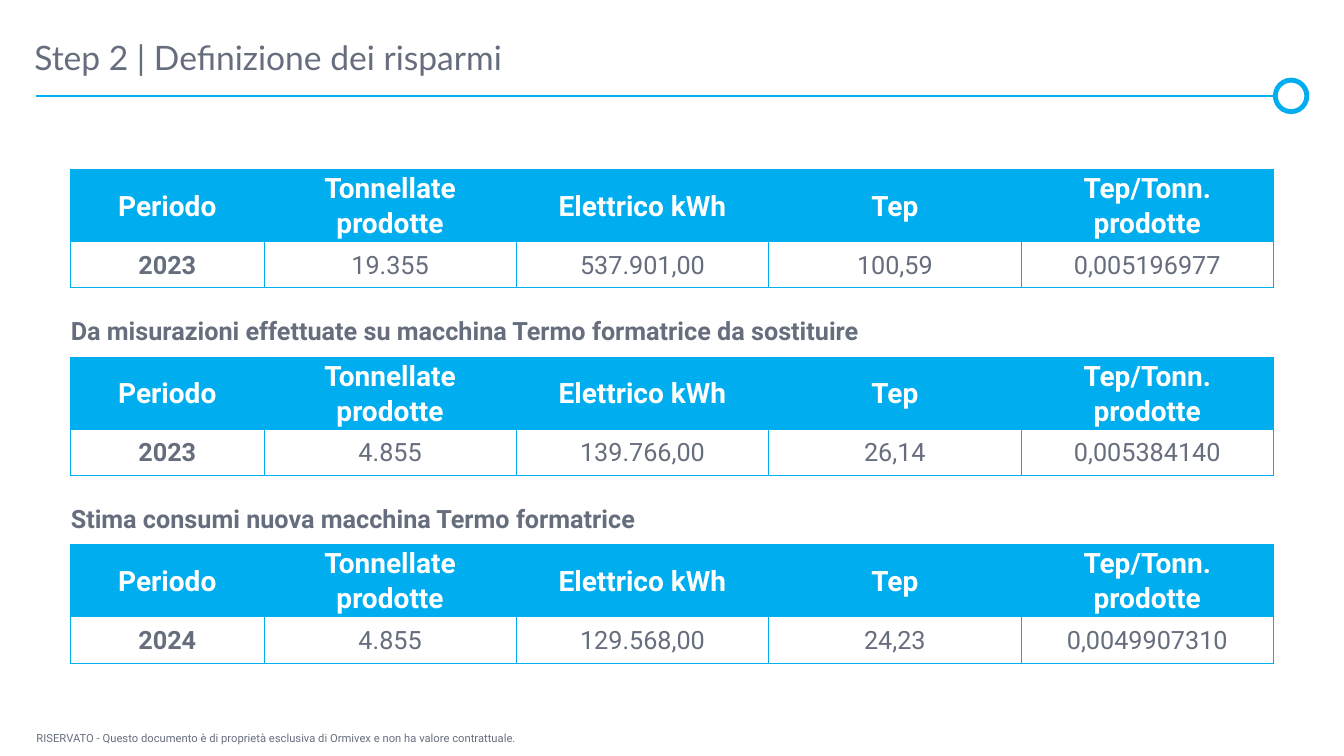
"""Build the slide that defines energy savings in three tables."""
import pptx
import pptx.dml.color
import pptx.enum.shapes
import pptx.enum.text
import pptx.oxml
import pptx.oxml.ns
import pptx.util

Pt = pptx.util.Pt
ANCHOR = pptx.enum.text.MSO_ANCHOR
ALIGN = pptx.enum.text.PP_ALIGN

COLORS = {"accent": "00AEEF", "text": "666E7E", "white": "FFFFFF"}
HEADINGS = ["Periodo", "Tonnellate prodotte", "Elettrico kWh", "Tep", "Tep/Tonn. prodotte"]
MEASUREMENTS = [
    ["2023", "19.355", "537.901,00", "100,59", "0,005196977"],
    ["2023", "4.855", "139.766,00", "26,14", "0,005384140"],
    ["2024", "4.855", "129.568,00", "24,23", "0,0049907310"],
]
CAPTIONS = [
    None,
    "Da misurazioni effettuate su macchina Termo formatrice da sostituire",
    "Stima consumi nuova macchina Termo formatrice",
]
COLUMN_WIDTHS = [138] + [180.3] * 4
ROW_HEIGHT = 33.1
FIRST_TABLE_TOP = 121
TABLE_PITCH = 134
CAPTION_RISE = 33.2


def color(name):
    return pptx.dml.color.RGBColor.from_string(COLORS[name])


def style(paragraph, size, name="text", bold=False, family="Roboto"):
    font = paragraph.font
    font.name, font.size, font.bold = family, Pt(size), bold
    font.color.rgb = color(name)


def add_title(slide, wording):
    title = slide.shapes.title
    title.left, title.top, title.width, title.height = Pt(24.5), Pt(13), Pt(877), Pt(42.5)
    frame = title.text_frame
    frame.text = wording
    frame.vertical_anchor = ANCHOR.BOTTOM
    frame.margin_left = frame.margin_top = frame.margin_right = frame.margin_bottom = 0
    heading = frame.paragraphs[0]
    heading.alignment = ALIGN.LEFT
    heading.line_spacing = 0.9
    style(heading, 24, family="Lato")


def add_rule(slide):
    rule = slide.shapes.add_connector(
        pptx.enum.shapes.MSO_CONNECTOR.STRAIGHT, Pt(25.5), Pt(68.5), Pt(911), Pt(68.5))
    rule.line.color.rgb = color("accent")
    rule.line.width = Pt(1.5)
    rule._element.spPr.append(pptx.oxml.parse_xml(
        f'<a:effectLst {pptx.oxml.ns.nsdecls("a")}/>'))
    ring = slide.shapes.add_shape(
        pptx.enum.shapes.MSO_SHAPE.OVAL, Pt(911), Pt(57.25), Pt(22.5), Pt(22.5))
    ring.shadow.inherit = False
    ring.fill.background()
    ring.line.color.rgb = color("accent")
    ring.line.width = Pt(3.5)


def add_text(slide, wording, left, top, width, height, size, bold=False):
    frame = slide.shapes.add_textbox(Pt(left), Pt(top), Pt(width), Pt(height)).text_frame
    frame.word_wrap = True
    frame.text = wording
    style(frame.paragraphs[0], size, bold=bold)


def add_borders(cell):
    properties = cell._tc.get_or_add_tcPr()
    for side in "LRTB":
        properties.append(pptx.oxml.parse_xml(
            f'<a:ln{side} {pptx.oxml.ns.nsdecls("a")} w="{Pt(0.5)}"><a:solidFill>'
            f'<a:srgbClr val="{COLORS["accent"]}"/></a:solidFill></a:ln{side}>'))


def fill_cell(cell, wording, is_heading, is_period):
    cell.text = wording
    cell.vertical_anchor = ANCHOR.MIDDLE
    cell.margin_left = cell.margin_right = Pt(5)
    cell.margin_top = cell.margin_bottom = 0
    add_borders(cell)
    paragraph = cell.text_frame.paragraphs[0]
    paragraph.alignment = ALIGN.CENTER
    paragraph.line_spacing = 1.07
    paragraph.space_after = Pt(8)
    if is_heading:
        cell.fill.solid()
        cell.fill.fore_color.rgb = color("accent")
        style(paragraph, 20, "white", bold=True)
    else:
        cell.fill.background()
        style(paragraph, 18, bold=is_period)


def add_savings_table(slide, top, values):
    rows = [HEADINGS, values]
    table = slide.shapes.add_table(
        len(rows), len(HEADINGS), Pt(50.5), Pt(top),
        Pt(sum(COLUMN_WIDTHS)), Pt(ROW_HEIGHT * len(rows))).table
    table.first_row = table.horz_banding = False
    for column, width in zip(table.columns, COLUMN_WIDTHS):
        column.width = Pt(width)
    for r, row in enumerate(rows):
        table.rows[r].height = Pt(ROW_HEIGHT)
        for c, wording in enumerate(row):
            fill_cell(table.cell(r, c), wording, r == 0, c == 0)


def main():
    deck = pptx.Presentation()
    deck.slide_width, deck.slide_height = Pt(960), Pt(540)
    slide = deck.slides.add_slide(deck.slide_layouts[5])
    add_rule(slide)
    add_text(slide, "RISERVATO - Questo documento è di proprietà esclusiva di Ormivex "
             "e non ha valore contrattuale.", 19, 519, 493, 17, 8)
    add_title(slide, "Step 2 | Definizione dei risparmi")
    for i, (caption, values) in enumerate(zip(CAPTIONS, MEASUREMENTS)):
        top = FIRST_TABLE_TOP + i * TABLE_PITCH
        if caption:
            add_text(slide, caption, 43.5, top - CAPTION_RISE, 601, 51, 18, bold=True)
        add_savings_table(slide, top, values)
    deck.save("out.pptx")


if __name__ == "__main__":
    main()
